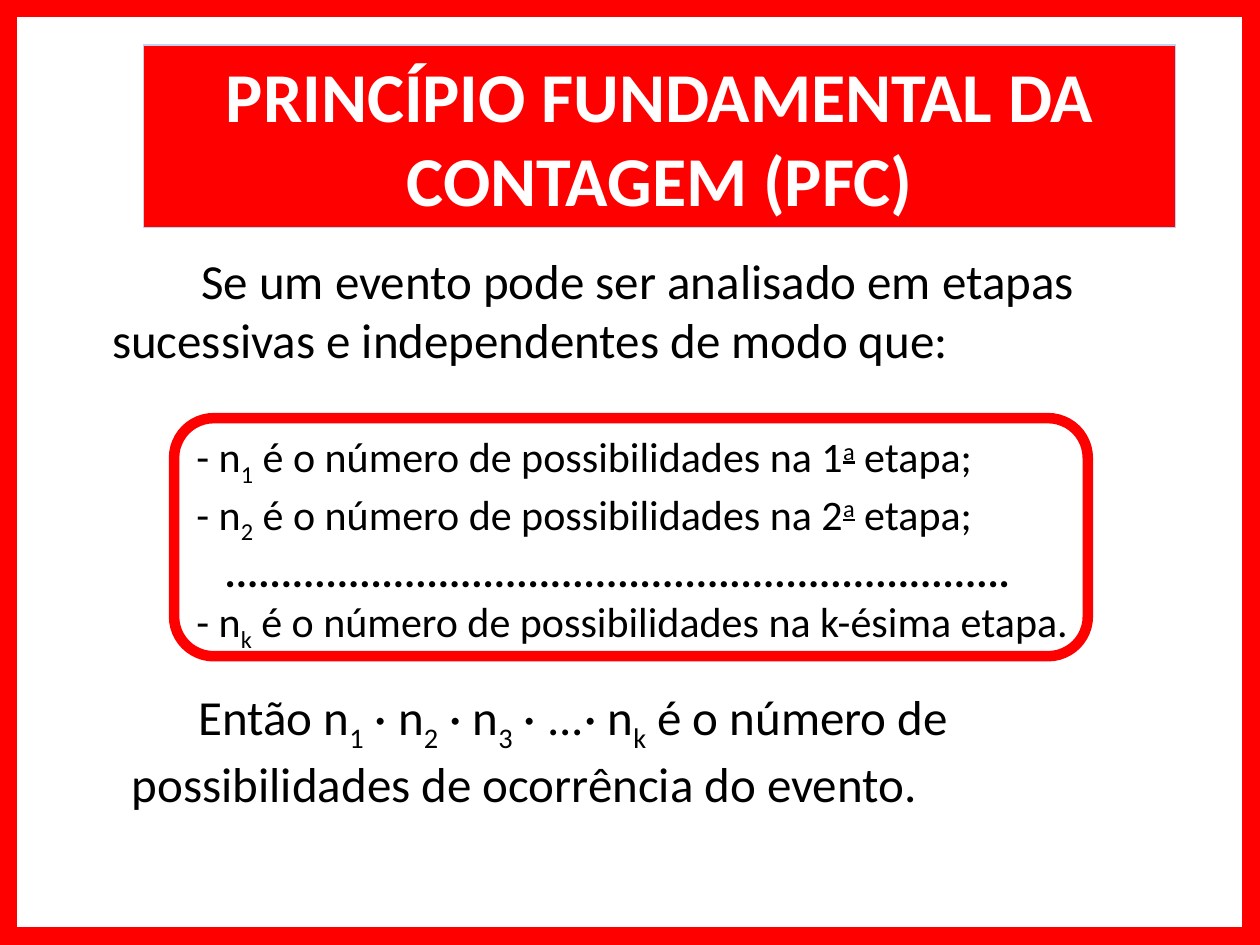
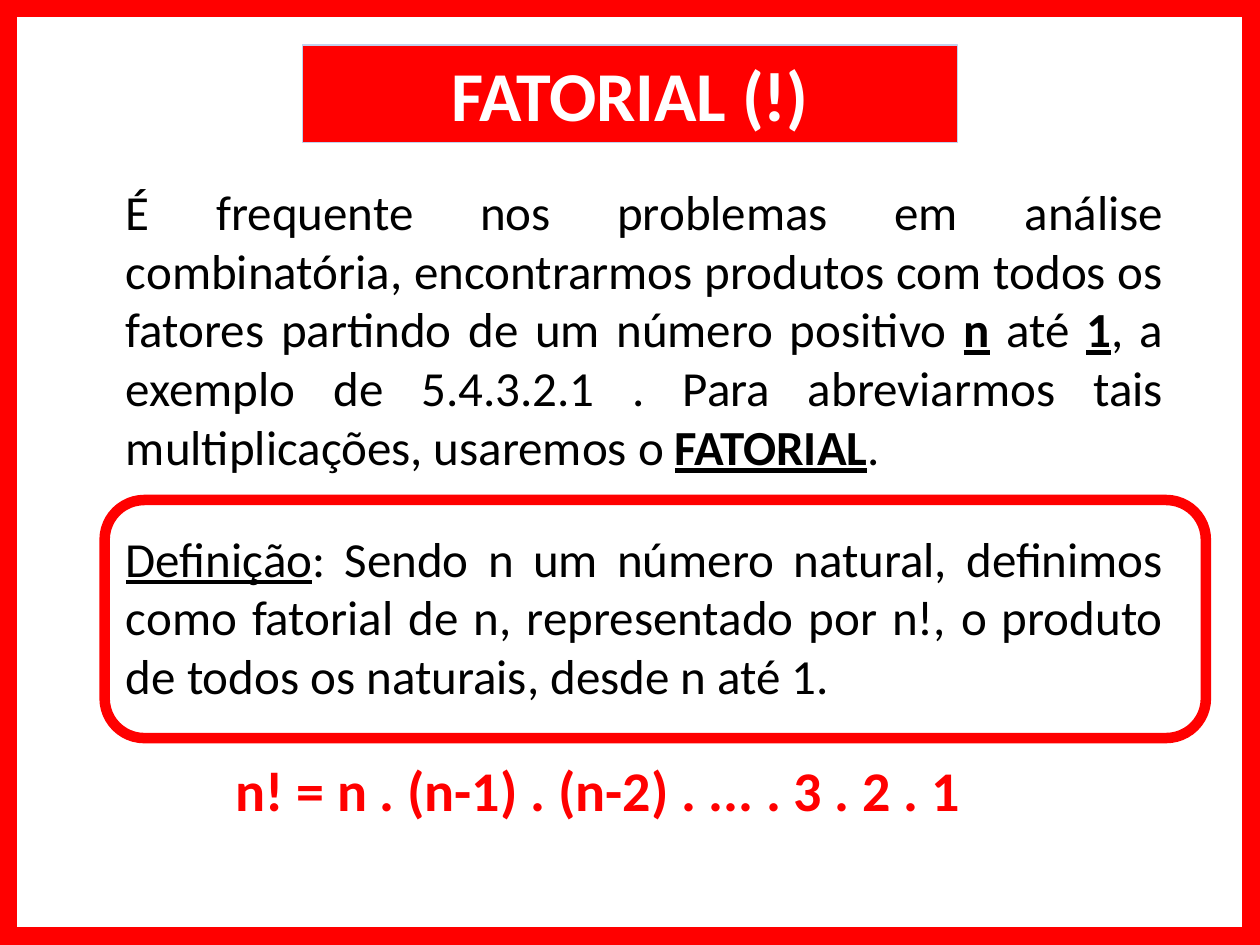
from pptx import Presentation
from pptx.dml.color import RGBColor
from pptx.enum.shapes import MSO_SHAPE as SHAPE
from pptx.enum.text import MSO_AUTO_SIZE as FIT, PP_ALIGN as ALIGN
from pptx.util import Cm, Pt

RED, WHITE, BLACK, PALE = "FF0000", "FFFFFF", "000000", "C2D1ED"
FONT = "Calibri"
WIDTH, HEIGHT = 25.4, 19.05
BASELINES = {"sub": "-25000", "sup": "30000"}
rgb = RGBColor.from_string


def outline(s, kind, box, line, width, fill=None):
    """Add a preset shape with a line and, if given, a fill."""
    sp = s.shapes.add_shape(kind, *map(Cm, box))
    sp.shadow.inherit = False
    if fill:
        sp.fill.solid()
        sp.fill.fore_color.rgb = rgb(fill)
    else:
        sp.fill.background()
    sp.line.color.rgb = rgb(line)
    sp.line.width = Pt(width)
    return sp


def write(sp, paragraphs, size, color=BLACK, align=ALIGN.LEFT, bold=False):
    """Fill sp with (indent in cm, runs); a run is a text or a (text, styles) pair."""
    tf = sp.text_frame
    tf.word_wrap = True
    tf.auto_size = FIT.SHAPE_TO_FIT_TEXT
    for i, (indent, runs) in enumerate(paragraphs):
        p = tf.add_paragraph() if i else tf.paragraphs[0]
        p.alignment = align
        p._p.get_or_add_pPr().set("indent", str(Cm(indent)))
        p.font.name, p.font.size, p.font.bold = FONT, Pt(size), bold
        p.font.color.rgb = rgb(color)
        for run in runs:
            text, styles = (run, "") if isinstance(run, str) else run
            r = p.add_run()
            r.text = text
            for style in styles.split():
                if style == "bold":
                    r.font.bold = True
                elif style == "under":
                    r.font.underline = True
                else:
                    r._r.get_or_add_rPr().set("baseline", BASELINES[style])


steps = [
    (0, ["- n", (n, "sub"), f" é o número de possibilidades na {n}", ("a", "sup under"), " etapa;"])
    for n in "12"
]
steps += [
    (0.57, [("." * 70, "bold")]),
    (0, ["- n", ("k", "sub"), " é o número de possibilidades na k-ésima etapa."]),
]
event = [(1.8, ["Se um evento pode ser analisado em etapas sucessivas e independentes de modo que:"])]
total = [(1.34, ["Então n", ("1", "sub"), " · n", ("2", "sub"), " · n", ("3", "sub"),
                 " · ...· n", ("k", "sub"),
                 " é o número de possibilidades de ocorrência do evento."])]
intro = [(0, ["É frequente nos problemas em análise combinatória, encontrarmos produtos com todos os "
              "fatores partindo de um número positivo ", ("n", "bold under"), " até ",
              ("1", "bold under"), ", a exemplo de 5.4.3.2.1 . Para abreviarmos tais "
              "multiplicações, usaremos o ", ("FATORIAL", "bold under"), "."])]
definition = [(0, [("Definição", "under"), ": Sendo n um número natural, definimos como fatorial "
                   "de n, representado por n!, o produto de todos os naturais, desde n até 1."])]
formula = [(0, ["n! = n . (n-1) . (n-2) . ... . 3 . 2 . 1"])]

# title, title box, highlight box, texts as (box, paragraphs, size, colour, alignment, bold)
slides = [
    ("PRINCÍPIO FUNDAMENTAL DA CONTAGEM (PFC)", (2.9, 0.91, 20.8, 3.68), (3.51, 8.43, 18.42, 4.8), [
        ((2.01, 4.93, 22.1, 3.81), event, 28, BLACK, ALIGN.LEFT, False),
        ((2.41, 13.72, 20.4, 3.81), total, 28, BLACK, ALIGN.LEFT, False),
        ((3.71, 8.56, 18.21, 4.32), steps, 24, BLACK, ALIGN.LEFT, False),
    ]),
    ("FATORIAL (!)", (6.1, 0.91, 13.2, 1.96), (2.11, 10.08, 22.2, 4.8), [
        ((2.29, 3.53, 21.41, 6.2), intro, 28, BLACK, ALIGN.JUSTIFY, False),
        ((2.29, 10.52, 21.41, 3.81), definition, 28, BLACK, ALIGN.JUSTIFY, False),
        ((4.5, 15.11, 15.6, 1.63), formula, 32, RED, ALIGN.JUSTIFY, True),
    ]),
]

prs = Presentation()
prs.slide_width, prs.slide_height = Cm(WIDTH), Cm(HEIGHT)
for title, title_box, highlight_box, texts in slides:
    s = prs.slides.add_slide(prs.slide_layouts[6])
    outline(s, SHAPE.RECTANGLE, (0, 0, WIDTH, HEIGHT), RED, 20)
    band = outline(s, SHAPE.RECTANGLE, title_box, PALE, 0.75, fill=RED)
    write(band, [(0, [title])], 40, WHITE, ALIGN.CENTER, bold=True)
    for box, *content in texts:
        write(s.shapes.add_textbox(*map(Cm, box)), *content)
    outline(s, SHAPE.ROUNDED_RECTANGLE, highlight_box, RED, 6)
prs.save("out.pptx")
